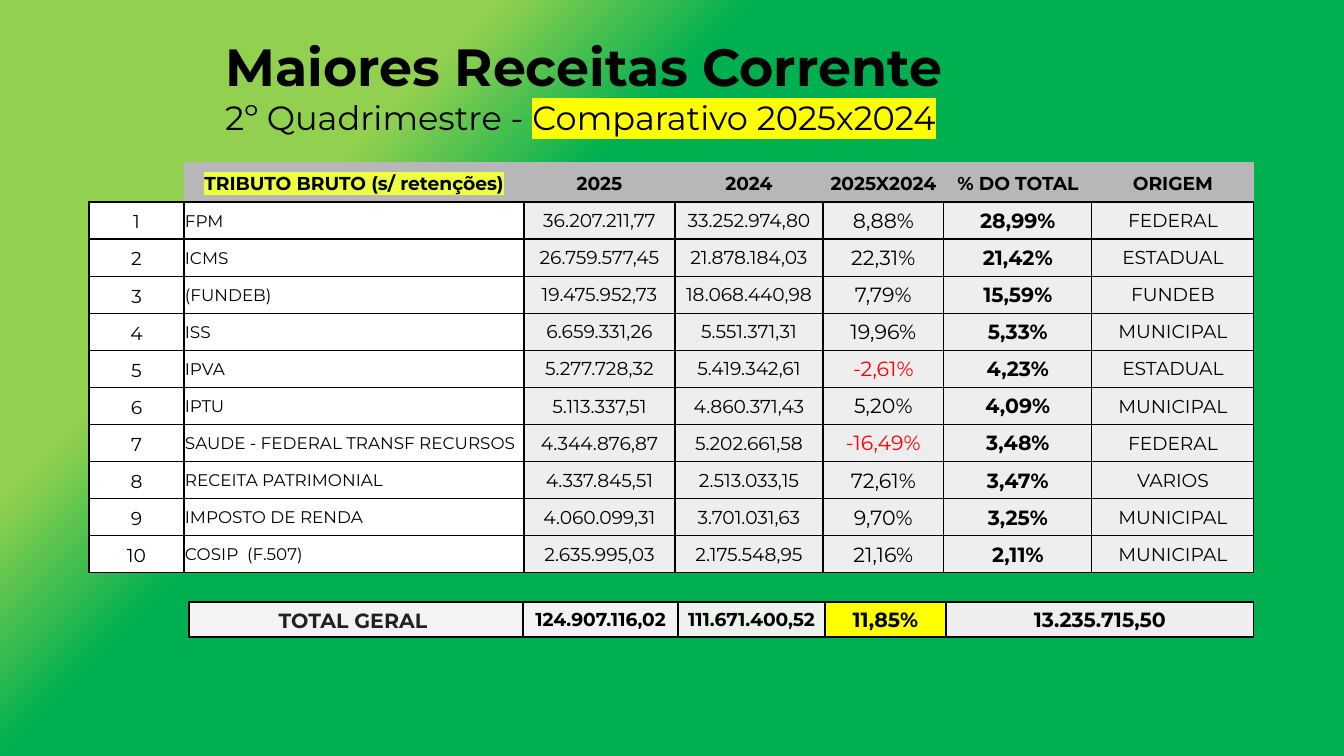
"""Build the slide comparing the largest current revenues of 2025 and 2024."""
from lxml import etree
from pptx import Presentation
from pptx.dml.color import RGBColor
from pptx.enum.text import MSO_ANCHOR, PP_ALIGN
from pptx.oxml.ns import qn
from pptx.util import Emu, Pt

LEFT, CENTER = PP_ALIGN.LEFT, PP_ALIGN.CENTER
MIDDLE, BOTTOM = MSO_ANCHOR.MIDDLE, MSO_ANCHOR.BOTTOM
BLACK, WHITE = RGBColor(0, 0, 0), RGBColor(255, 255, 255)
INK, RED = RGBColor(0x21, 0x21, 0x21), RGBColor(255, 0, 0)
YELLOW, LIME = RGBColor(255, 255, 0), RGBColor(0xEE, 0xFF, 0x41)
GRAY, PALE = RGBColor(0xB7, 0xB7, 0xB7), RGBColor(0xEE, 0xEE, 0xEE)
SILVER, MINT = RGBColor(0xF3, 0xF3, 0xF3), RGBColor(0xEE, 0xF2, 0xED)
LIGHT_GREEN, GREEN = RGBColor(0x92, 0xD0, 0x50), RGBColor(0, 0xB0, 0x50)
FONT = "Montserrat"
NO_STYLE = "{2D5ABB26-0587-4C30-8999-92F81FD0307C}"
SIDES = ("lnL", "lnR", "lnT", "lnB")

TITLE = "Maiores Receitas Corrente"
SUBTITLE = [("2º Quadrimestre - ", None), ("Comparativo 2025x2024", YELLOW)]
GRADIENT = [(0, LIGHT_GREEN), (24, LIGHT_GREEN), (36, GREEN), (100, GREEN)]
HEADER = ["", "TRIBUTO BRUTO (s/ retenções)", "2025", "2024", "2025X2024",
          "% DO TOTAL", "ORIGEM"]
REVENUES = [
    ("FPM", "36.207.211,77", "33.252.974,80", "8,88%", "28,99%", "FEDERAL"),
    ("ICMS", "26.759.577,45", "21.878.184,03", "22,31%", "21,42%", "ESTADUAL"),
    ("(FUNDEB)", "19.475.952,73", "18.068.440,98", "7,79%", "15,59%", "FUNDEB"),
    ("ISS", "6.659.331,26", "5.551.371,31", "19,96%", "5,33%", "MUNICIPAL"),
    ("IPVA", "5.277.728,32", "5.419.342,61", "-2,61%", "4,23%", "ESTADUAL"),
    ("IPTU", "5.113.337,51", "4.860.371,43", "5,20%", "4,09%", "MUNICIPAL"),
    ("SAUDE - FEDERAL TRANSF RECURSOS", "4.344.876,87", "5.202.661,58",
     "-16,49%", "3,48%", "FEDERAL"),
    ("RECEITA PATRIMONIAL", "4.337.845,51", "2.513.033,15", "72,61%", "3,47%",
     "VARIOS"),
    ("IMPOSTO DE RENDA", "4.060.099,31", "3.701.031,63", "9,70%", "3,25%",
     "MUNICIPAL"),
    ("COSIP  (F.507)", "2.635.995,03", "2.175.548,95", "21,16%", "2,11%",
     "MUNICIPAL"),
]
TOTALS = ["TOTAL GERAL ", "124.907.116,02", "111.671.400,52", "11,85%",
          "13.235.715,50"]

ROOMY, TIGHT = (4, 3, 4, 3), (1, 1, 1, 0)
HEAD_STYLE = dict(fill=GRAY, bold=True, margins=ROOMY, spacing=1.15,
                  borders=("lnB",))
COLUMN_STYLES = [
    dict(fill=WHITE, margins=ROOMY, spacing=1.15),
    dict(fill=WHITE, size=9, align=LEFT),
    dict(),
    dict(),
    dict(size=11),
    dict(size=11, bold=True),
    dict(),
]
TOTAL_STYLES = [
    dict(fill=SILVER, size=11, color=INK, margins=ROOMY, spacing=1.15,
         anchor=BOTTOM),
    dict(fill=SILVER),
    dict(fill=MINT),
    dict(fill=YELLOW, size=11),
    dict(size=11),
]


def px(n):
    return Emu(round(n * 914400 / 134.4))


def add_color(parent, tag, color):
    el = etree.SubElement(parent, qn(tag))
    etree.SubElement(el, qn("a:srgbClr"), val=str(color))
    return el


def add_run(p, text, size, bold=False, color=BLACK, highlight=None):
    r = p.add_run()
    r.text = text
    r.font.color.rgb = color
    for name, value in dict(name=FONT, size=Pt(size), bold=bold).items():
        setattr(r.font, name, value)
    if highlight is not None:
        rPr = r.font._element
        mark = add_color(rPr, "a:highlight", highlight)
        rPr.find(qn("a:solidFill")).addnext(mark)


def fill_cell(cell, text, fill=PALE, size=10, bold=False, color=BLACK,
              highlight=None, align=CENTER, anchor=MIDDLE, margins=TIGHT,
              spacing=1.0, borders=SIDES):
    for side, gap in zip(("left", "top", "right", "bottom"), margins):
        setattr(cell, f"margin_{side}", px(gap))
    cell.vertical_anchor = anchor
    p = cell.text_frame.paragraphs[0]
    p.alignment, p.line_spacing = align, spacing
    tcPr = cell._tc.get_or_add_tcPr()
    for side in SIDES:
        ln = etree.SubElement(tcPr, qn(f"a:{side}"), w=str(Pt(0.75)))
        if side in borders:
            add_color(ln, "a:solidFill", BLACK)
        else:
            etree.SubElement(ln, qn("a:noFill"))
    if text:
        cell.fill.solid()
        cell.fill.fore_color.rgb = fill
        add_run(p, text, size, bold, color, highlight)
    else:
        cell.fill.background()
        p._p.get_or_add_endParaRPr().set("sz", str(size * 100))


def add_grid(s, left, top, widths, heights):
    frame = s.shapes.add_table(len(heights), len(widths), px(left), px(top),
                               px(sum(widths)), px(sum(heights)))
    table = frame.table
    table.first_row = table.horz_banding = False
    table._tbl.tblPr.find(qn("a:tableStyleId")).text = NO_STYLE
    for column, width in zip(table.columns, widths):
        column.width = px(width)
    for row, height in zip(table.rows, heights):
        row.height = px(height)
    return table


def add_background(s):
    fill = s.background.fill
    fill.gradient()
    fill.gradient_angle = 315
    stops = s._element.find(".//" + qn("a:gsLst"))
    for stop in list(stops):
        stops.remove(stop)
    for position, color in GRADIENT:
        gs = etree.SubElement(stops, qn("a:gs"), pos=str(position * 1000))
        etree.SubElement(gs, qn("a:srgbClr"), val=str(color))


def add_title(s):
    tf = s.shapes.add_textbox(px(212), px(30), px(1032), px(114)).text_frame
    tf.word_wrap, tf.vertical_anchor = True, BOTTOM
    p = tf.paragraphs[0]
    add_run(p, TITLE, 28, bold=True)
    p.add_line_break()
    for text, highlight in SUBTITLE:
        add_run(p, text, 18, highlight=highlight)


def add_revenues(s):
    table = add_grid(s, 89, 162, [95, 340, 151, 148, 121, 148, 162],
                     [40] + [37.1] * len(REVENUES))
    for c, text in enumerate(HEADER):
        fill_cell(table.cell(0, c), text, highlight=LIME if c == 1 else None,
                  **HEAD_STYLE)
    for i, revenue in enumerate(REVENUES, 1):
        for c, (text, style) in enumerate(zip((str(i), *revenue), COLUMN_STYLES)):
            color = RED if text.startswith("-") else BLACK
            fill_cell(table.cell(i, c), text, color=color, **style)


def add_totals(s):
    table = add_grid(s, 189, 602, [334, 155, 147, 121, 308], [35])
    for c, (text, style) in enumerate(zip(TOTALS, TOTAL_STYLES)):
        fill_cell(table.cell(0, c), text, bold=True, **style)


def main():
    prs = Presentation()
    prs.slide_width, prs.slide_height = px(1344), px(756)
    s = prs.slides.add_slide(prs.slide_layouts[6])
    add_background(s)
    add_title(s)
    add_revenues(s)
    add_totals(s)
    prs.save("out.pptx")


if __name__ == "__main__":
    main()
